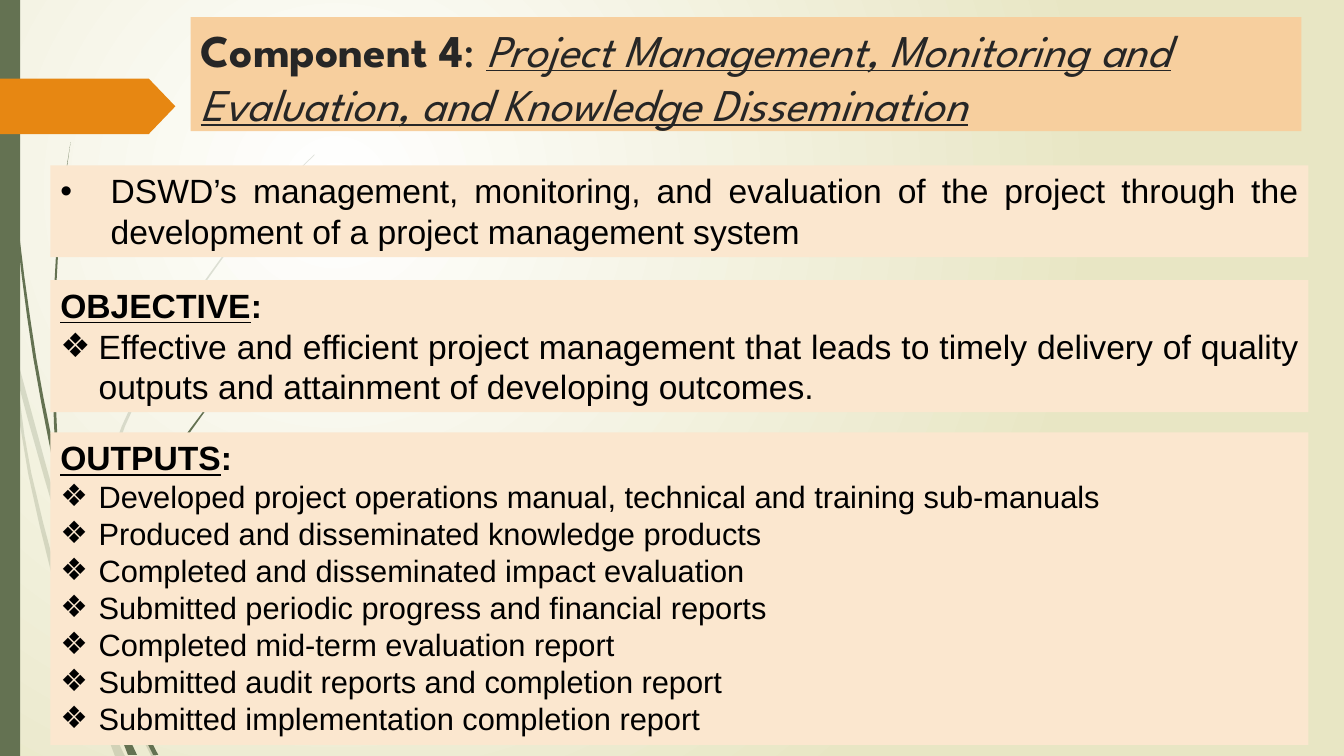
from lxml import etree
from pptx import Presentation
from pptx.dml.color import RGBColor
from pptx.enum.shapes import MSO_SHAPE
from pptx.enum.text import MSO_ANCHOR, MSO_AUTO_SIZE, PP_ALIGN
from pptx.oxml.ns import qn
from pptx.util import Inches, Pt

RECT, TAG = MSO_SHAPE.RECTANGLE, MSO_SHAPE.PENTAGON
TOP, FIXED = MSO_ANCHOR.TOP, MSO_AUTO_SIZE.NONE
LEFT, JUSTIFY = PP_ALIGN.LEFT, PP_ALIGN.JUSTIFY
WHITE = RGBColor(0xFF, 0xFF, 0xFF)
CREAM = RGBColor(0xE8, 0xE6, 0xC4)
GREEN = RGBColor(0x64, 0x72, 0x52)
ORANGE = RGBColor(0xE7, 0x87, 0x12)
PEACH = RGBColor(0xF7, 0xCF, 0x9E)
PALE = RGBColor(0xFB, 0xE7, 0xCF)
BLACK = RGBColor(0, 0, 0)
INK = RGBColor(0x26, 0x26, 0x26)
HIGH = 7.5
WIDE = HIGH * 16 / 9
PANEL_X, PANEL_W = 0.5, 12.48
FINE = 1000  # outline units to the inch

# Each stem is the two long edges of its outline, taken in turn, in inches.
FAINT = [
    ([(0.14, 3.45), (0.17, 3.76), (0.58, 5.22), (0.84, 5.99)],
     [(0.85, 5.86), (0.62, 5.2), (0.14, 3.45)]),
    ([(0.88, 5.96), (0.88, 6.1), (1.23, 6.94), (1.5, 7.5)],
     [(1.55, 7.5), (1.27, 6.92), (0.92, 6.07)]),
    ([(0.11, 3.5), (0.28, 4.7), (0.65, 6.21), (0.92, 6.93), (1.01, 7.14)],
     [(0.93, 6.83), (0.7, 6.19), (0.31, 4.69), (0.17, 3.76), (0.11, 3.5)]),
    ([(0.88, 5.96), (0.88, 5.84), (1.1, 4.62), (1.6, 3.49), (2.29, 2.45),
      (2.68, 1.98), (3.12, 1.54)],
     [(3.12, 1.53), (2.68, 1.97), (2.28, 2.44), (1.58, 3.48), (1.07, 4.61),
      (0.85, 5.84)]),
    ([(0.93, 6.83), (1.01, 7.14), (1.14, 7.5)],
     [(1.24, 7.5), (1.05, 7.11), (0.93, 6.83)]),
]
DARK = [
    ([(0.03, 0), (0.04, 0.48), (0.07, 1.1), (0.17, 2.33), (0.33, 3.55),
      (0.57, 4.81)],
     [(0.55, 4.53), (0.36, 3.55), (0.19, 2.32), (0.08, 1.09), (0.05, 0.48),
      (0.04, 0)]),
    ([(1.1, 6.41), (1.11, 6.56), (1.32, 7.08), (1.52, 7.49)],
     [(1.57, 7.49), (1.36, 7.06), (1.13, 6.49)]),
    ([(0.6, 4.72), (0.58, 4.53), (0.54, 3.49), (0.58, 2.45), (0.63, 1.93),
      (0.7, 1.41)],
     [(0.7, 1.41), (0.62, 1.93), (0.56, 2.45), (0.52, 3.49), (0.55, 4.49),
      (0.6, 4.72)]),
    ([(1.1, 6.41), (1.11, 6.33), (1.25, 5.52), (1.58, 4.76), (2.05, 4.06),
      (2.31, 3.74), (2.61, 3.44)],
     [(2.6, 3.44), (2.31, 3.73), (2.04, 4.05), (1.56, 4.74), (1.22, 5.51),
      (1.06, 6.31)]),
    ([(1.1, 6.91), (1.17, 7.22), (1.27, 7.49)],
     [(1.36, 7.49), (1.22, 7.19), (1.1, 6.91)]),
]
OUTPUTS = [
    "Developed project operations manual, technical and training sub-manuals",
    "Produced and disseminated knowledge products",
    "Completed and disseminated impact evaluation",
    "Submitted periodic progress and financial reports",
    "Completed mid-term evaluation report",
    "Submitted audit reports and completion report",
    "Submitted implementation completion report",
]


def paint(shape, color, alpha=None):
    shape.shadow.inherit = False
    shape.fill.solid()
    shape.fill.fore_color.rgb = color
    shape.line.fill.background()
    if alpha:
        tint = shape.fill._xPr.find(".//" + qn("a:srgbClr"))
        etree.SubElement(tint, qn("a:alpha"), val=str(alpha * 1000))


def smooth(edge, steps=3):
    """Return points on a Catmull-Rom curve through the edge."""
    ends = [edge[0], *edge, edge[-1]]
    curve = [edge[0]]
    for a, b, c, d in zip(ends, ends[1:], ends[2:], ends[3:]):
        for n in range(1, steps + 1):
            t = n / steps
            curve.append(tuple(
                q + t * (r - p + t * (2 * p - 5 * q + 4 * r - s
                                      + t * (3 * (q - r) + s - p))) / 2
                for p, q, r, s in zip(a, b, c, d)))
    return curve


def add_stems(slide, stems, alpha=None):
    for rise, fall in stems:
        start, *rest = [(x * FINE, y * FINE)
                        for x, y in smooth(rise) + smooth(fall)]
        pen = slide.shapes.build_freeform(*start, scale=Inches(1) / FINE)
        pen.add_line_segments(rest, close=True)
        paint(pen.convert_to_shape(), GREEN, alpha)


def add_block(slide, kind, box, color):
    shape = slide.shapes.add_shape(kind, *map(Inches, box))
    paint(shape, color)
    return shape


def add_run(para, text, font="Arial", size=24, color=BLACK, bold=False,
            italic=False, under=False):
    run = para.add_run()
    run.text = text
    face = run.font
    face.name, face.size, face.color.rgb = font, Pt(size), color
    face.bold, face.italic, face.underline = bold, italic, under


def set_mark(para, mark, indent):
    props = para._p.get_or_add_pPr()
    props.set("marL", str(Inches(indent)))
    props.set("indent", str(-Inches(indent)))
    etree.SubElement(props, qn("a:buFont"), typeface="Arial")
    etree.SubElement(props, qn("a:buChar"), char=mark)


def add_panel(slide, top, height, items, head=None, mark="❖", indent=0.38,
              size=24):
    shape = add_block(slide, RECT, (PANEL_X, top, PANEL_W, height), PALE)
    frame = shape.text_frame
    frame.word_wrap, frame.vertical_anchor = True, TOP
    para = frame.paragraphs[0]
    if head:
        para.alignment = JUSTIFY
        add_run(para, head, bold=True, under=True)
        add_run(para, ":", bold=True)
    for n, item in enumerate(items):
        if head or n:
            para = frame.add_paragraph()
        para.alignment = JUSTIFY
        set_mark(para, mark, indent)
        add_run(para, item, size=size)


def add_title(slide, box):
    title = slide.shapes.title
    title.left, title.top, title.width, title.height = map(Inches, box)
    title.fill.solid()
    title.fill.fore_color.rgb = PEACH
    frame = title.text_frame
    frame.word_wrap, frame.auto_size, frame.vertical_anchor = True, FIXED, TOP
    para = frame.paragraphs[0]
    para.alignment = LEFT
    style = {"font": "League Spartan", "size": 32.4, "color": INK}
    add_run(para, "Component 4", bold=True, **style)
    add_run(para, ": ", **style)
    add_run(para, "Project Management, Monitoring and Evaluation, "
            "and Knowledge Dissemination", italic=True, under=True, **style)


def add_back(slide):
    """Fill the background with a round gradient centred at upper left."""
    fill = slide.background.fill
    fill.gradient()
    for stop, color, place in zip(fill.gradient_stops, (WHITE, CREAM), (0, 1)):
        stop.color.rgb, stop.position = color, place
    grad = next(slide.element.iter(qn("a:gradFill")))
    grad.remove(grad.find(qn("a:lin")))
    round_fill = etree.SubElement(grad, qn("a:path"), path="circle")
    etree.SubElement(round_fill, qn("a:fillToRect"), l="50000", t="50000",
                     r="100000", b="100000")


def add_decor(slide):
    add_stems(slide, FAINT, alpha=20)
    add_stems(slide, DARK)
    add_block(slide, RECT, (0, 0, 0.2, HIGH), GREEN)
    tag = add_block(slide, TAG, (0, 0.78, 1.74, 0.55), ORANGE)
    tag.adjustments[0] = 0.48


def main():
    deck = Presentation()
    deck.slide_width, deck.slide_height = Inches(WIDE), Inches(HIGH)
    slide = deck.slides.add_slide(deck.slide_layouts[5])
    add_back(slide)
    add_decor(slide)
    add_title(slide, (1.89, 0.17, 11.02, 1.13))
    add_panel(slide, 1.64, 0.91, [
        "DSWD’s management, monitoring, and evaluation of the project "
        "through the development of a project management system"],
        mark="•", indent=0.5)
    add_panel(slide, 2.78, 1.31, [
        "Effective and efficient project management that leads to timely "
        "delivery of quality outputs and attainment of developing outcomes."],
        head="OBJECTIVE")
    add_panel(slide, 4.29, 3.1, OUTPUTS, head="OUTPUTS", size=22)
    deck.save("out.pptx")


if __name__ == "__main__":
    main()
